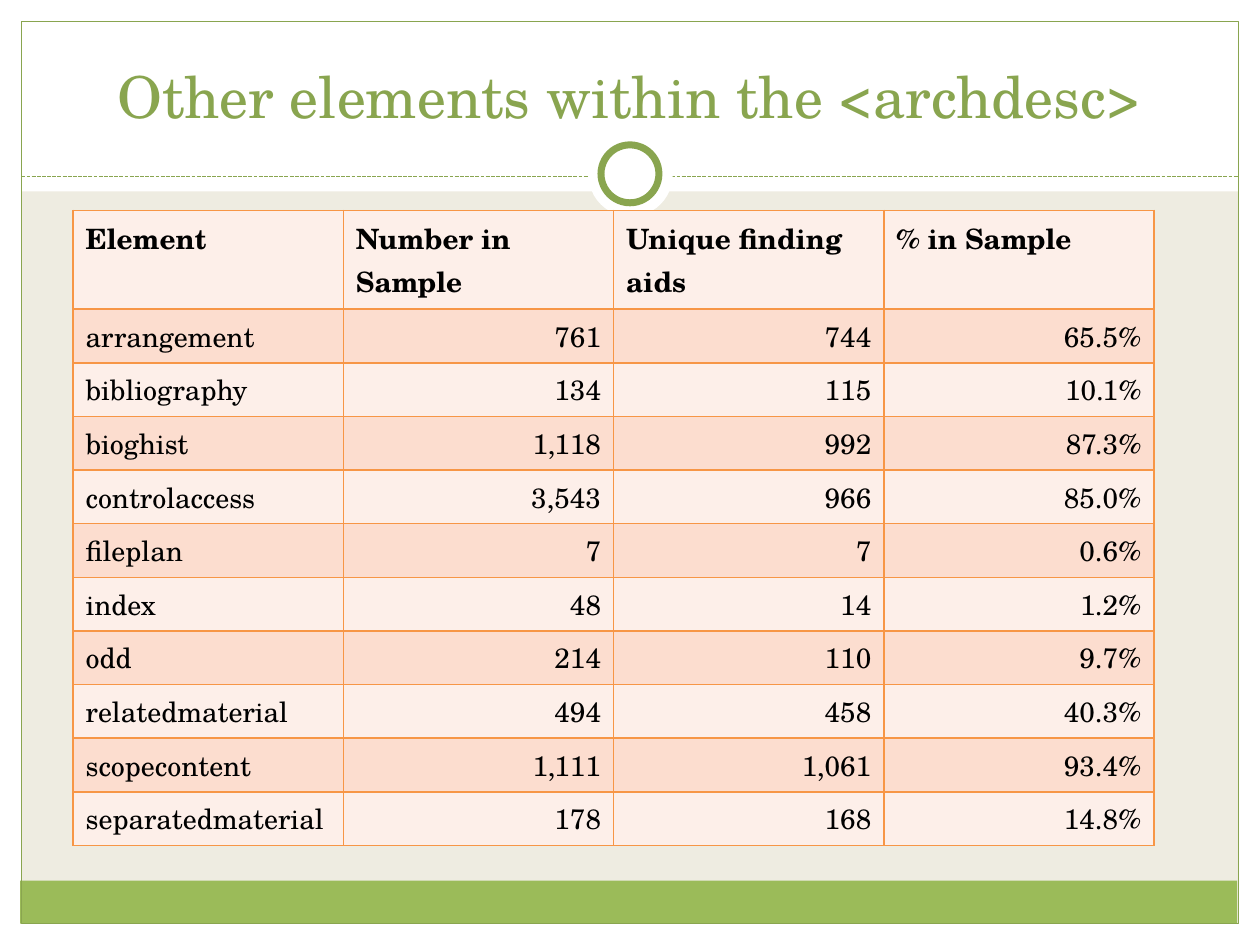
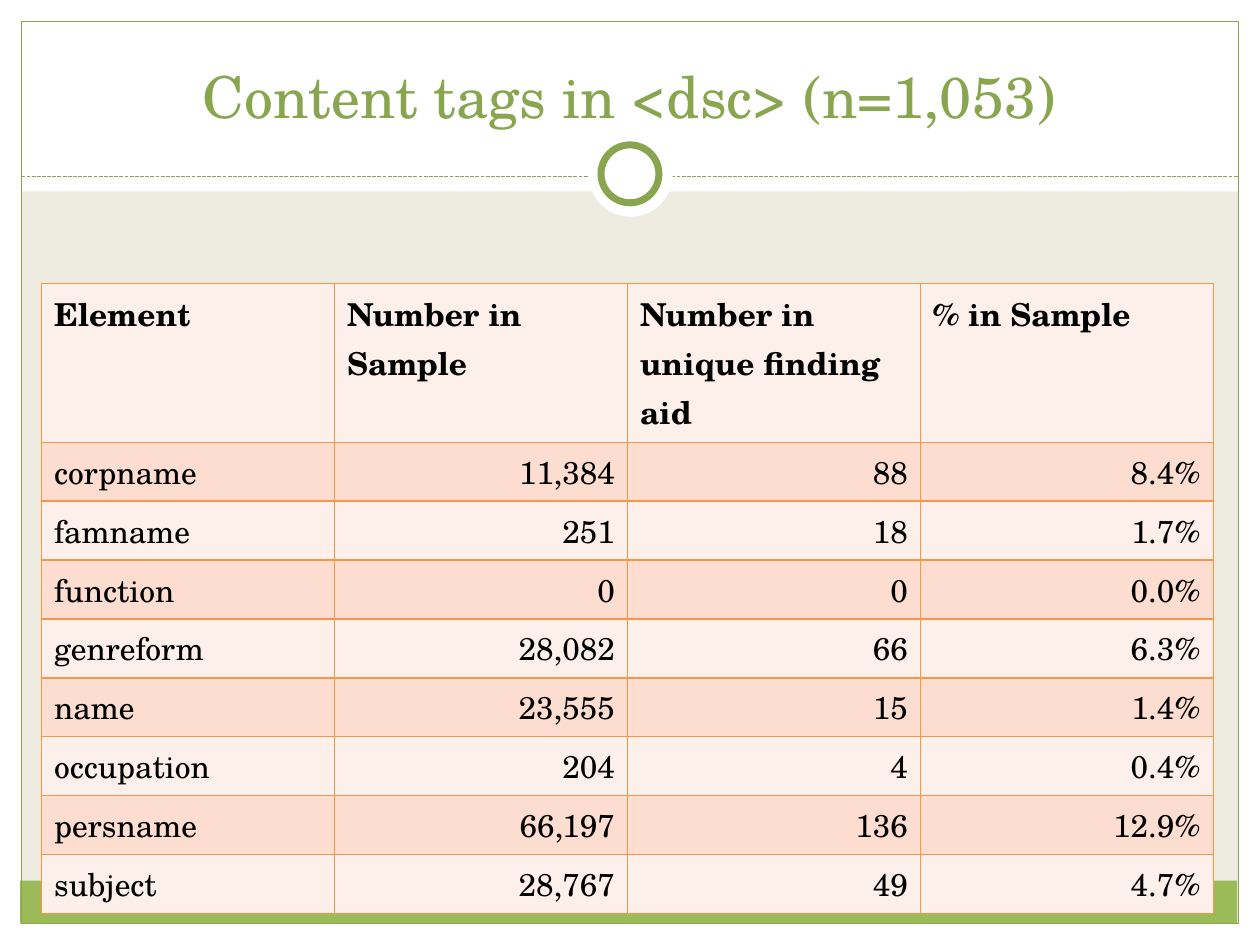
import pptx
import pptx.util
import pptx.dml.color
import pptx.enum.dml
import pptx.enum.shapes
import pptx.enum.text
import pptx.oxml
import pptx.oxml.ns

Inches = pptx.util.Inches
Pt = pptx.util.Pt
Shapes = pptx.enum.shapes.MSO_SHAPE
Align = pptx.enum.text.PP_ALIGN

FONT = "TeX Gyre Schola"
PAPER, WHITE, BLACK = "EEECE1", "FFFFFF", "000000"
GREEN, DARK_GREEN = "9BBB59", "89A54F"
ORANGE = "F79646"
ROW_FILLS = ("FDEFE9", "FCDDCF")
TITLE_ONLY = 5
EDGE = 0.17
ROW_HEIGHT = 0.41


def color(value):
    return pptx.dml.color.RGBColor.from_string(value)


def write(frame, text, size, ink, bold=False, align=Align.LEFT):
    para = frame.paragraphs[0]
    para.alignment = align
    span = para.add_run()
    span.text = text
    span.font.name = FONT
    span.font.size = Pt(size)
    span.font.bold = bold
    span.font.color.rgb = color(ink)


def add_borders(cell, ink, width):
    """Line all four sides; call before filling the cell, as the schema orders them."""
    properties = cell._tc.get_or_add_tcPr()
    for side in ("lnL", "lnR", "lnT", "lnB"):
        properties.append(pptx.oxml.parse_xml(
            f'<a:{side} {pptx.oxml.ns.nsdecls("a")} w="{Pt(width)}">'
            f'<a:solidFill><a:srgbClr val="{ink}"/></a:solidFill></a:{side}>'))


class Builder:
    def __init__(self):
        self.deck = pptx.Presentation()
        self.deck.slide_width = Inches(10)
        self.deck.slide_height = Inches(7.5)
        self.layout = self.deck.slide_layouts[TITLE_ONLY]
        self.page = None

    def new_page(self, title):
        first = self.page is None
        self.page = self.deck.slides.add_slide(self.layout)
        if first:
            self.decorate_layout()
        self.title(title)

    def title(self, text):
        box = self.page.shapes.title
        box.left, box.top = Inches(0.33), Inches(0.25)
        box.width, box.height = Inches(9.33), Inches(0.83)
        frame = box.text_frame
        frame.auto_size = pptx.enum.text.MSO_AUTO_SIZE.NONE
        frame.vertical_anchor = pptx.enum.text.MSO_ANCHOR.BOTTOM
        write(frame, text, 33, DARK_GREEN, align=Align.CENTER)

    def shape(self, kind, left, top, width, height, fill=None, line=None, weight=0.75):
        shape = self.page.shapes.add_shape(
            kind, Inches(left), Inches(top), Inches(width), Inches(height))
        shape.shadow.inherit = False
        if fill:
            shape.fill.solid()
            shape.fill.fore_color.rgb = color(fill)
        else:
            shape.fill.background()
        if line:
            shape.line.color.rgb = color(line)
            shape.line.width = Pt(weight)
        else:
            shape.line.fill.background()

    def dashed_rule(self, left, right, top):
        rule = self.page.shapes.add_connector(
            pptx.enum.shapes.MSO_CONNECTOR.STRAIGHT,
            Inches(left), Inches(top), Inches(right), Inches(top))
        rule.line.color.rgb = color(DARK_GREEN)
        rule.line.width = Pt(0.75)
        rule.line.dash_style = pptx.enum.dml.MSO_LINE.SQUARE_DOT
        rule.element.spPr.append(
            pptx.oxml.parse_xml(f'<a:effectLst {pptx.oxml.ns.nsdecls("a")}/>'))

    def decorate_layout(self):
        """Draw the shared frame on the current page, then move it to the layout."""
        background = self.layout.background.fill
        background.solid()
        background.fore_color.rgb = color(PAPER)
        for margin in ((0, 7.33, 10, EDGE), (0, 0, 10, 1.52),
                       (0, 0, EDGE, 7.5), (10 - EDGE, 0, EDGE, 7.5)):
            self.shape(Shapes.RECTANGLE, *margin, fill=WHITE)
        self.shape(Shapes.RECTANGLE, 0.16, 6.99, 9.66, 0.34, fill=GREEN)
        self.shape(Shapes.RECTANGLE, EDGE, EDGE, 9.66, 7.16, line=DARK_GREEN)
        self.dashed_rule(EDGE, 10 - EDGE, 1.4)
        self.shape(Shapes.OVAL, 4.67, 1.05, 0.67, 0.67, fill=WHITE)
        self.shape(Shapes.OVAL, 4.77, 1.15, 0.46, 0.46, fill=WHITE,
                   line=DARK_GREEN, weight=4)
        for shape in list(self.page.shapes):
            if not shape.is_placeholder:
                self.layout.shapes.element.append(shape.element)

    def table(self, rows, left, top, width, size):
        table = self.page.shapes.add_table(
            len(rows), len(rows[0]), Inches(left), Inches(top),
            Inches(width), Inches(ROW_HEIGHT * len(rows))).table
        for row_index, values in enumerate(rows):
            for column_index, value in enumerate(values):
                cell = table.cell(row_index, column_index)
                header = row_index == 0
                number = not header and column_index > 0
                add_borders(cell, ORANGE, 1)
                cell.fill.solid()
                cell.fill.fore_color.rgb = color(ROW_FILLS[row_index % 2])
                write(cell.text_frame, value, size, BLACK, bold=header,
                      align=Align.RIGHT if number else Align.LEFT)


ARCHDESC_ROWS = [
    ("Element", "Number in Sample", "Unique finding aids", "% in Sample"),
    ("arrangement", "761", "744", "65.5%"),
    ("bibliography", "134", "115", "10.1%"),
    ("bioghist", "1,118", "992", "87.3%"),
    ("controlaccess", "3,543", "966", "85.0%"),
    ("fileplan", "7", "7", "0.6%"),
    ("index", "48", "14", "1.2%"),
    ("odd", "214", "110", "9.7%"),
    ("relatedmaterial", "494", "458", "40.3%"),
    ("scopecontent", "1,111", "1,061", "93.4%"),
    ("separatedmaterial", "178", "168", "14.8%"),
]

DSC_ROWS = [
    ("Element", "Number in Sample", "Number in unique finding aid", "% in Sample"),
    ("corpname", "11,384", "88", "8.4%"),
    ("famname", "251", "18", "1.7%"),
    ("function", "0", "0", "0.0%"),
    ("genreform", "28,082", "66", "6.3%"),
    ("name", "23,555", "15", "1.4%"),
    ("occupation", "204", "4", "0.4%"),
    ("persname", "66,197", "136", "12.9%"),
    ("subject", "28,767", "49", "4.7%"),
]


def main():
    builder = Builder()
    builder.new_page("Other elements within the <archdesc>")
    builder.table(ARCHDESC_ROWS, 0.58, 1.67, 8.58, size=16)
    builder.new_page("Content tags in <dsc> (n=1,053)")
    builder.table(DSC_ROWS, 0.33, 2.25, 9.3, size=18)
    builder.deck.save("out.pptx")


if __name__ == "__main__":
    main()
